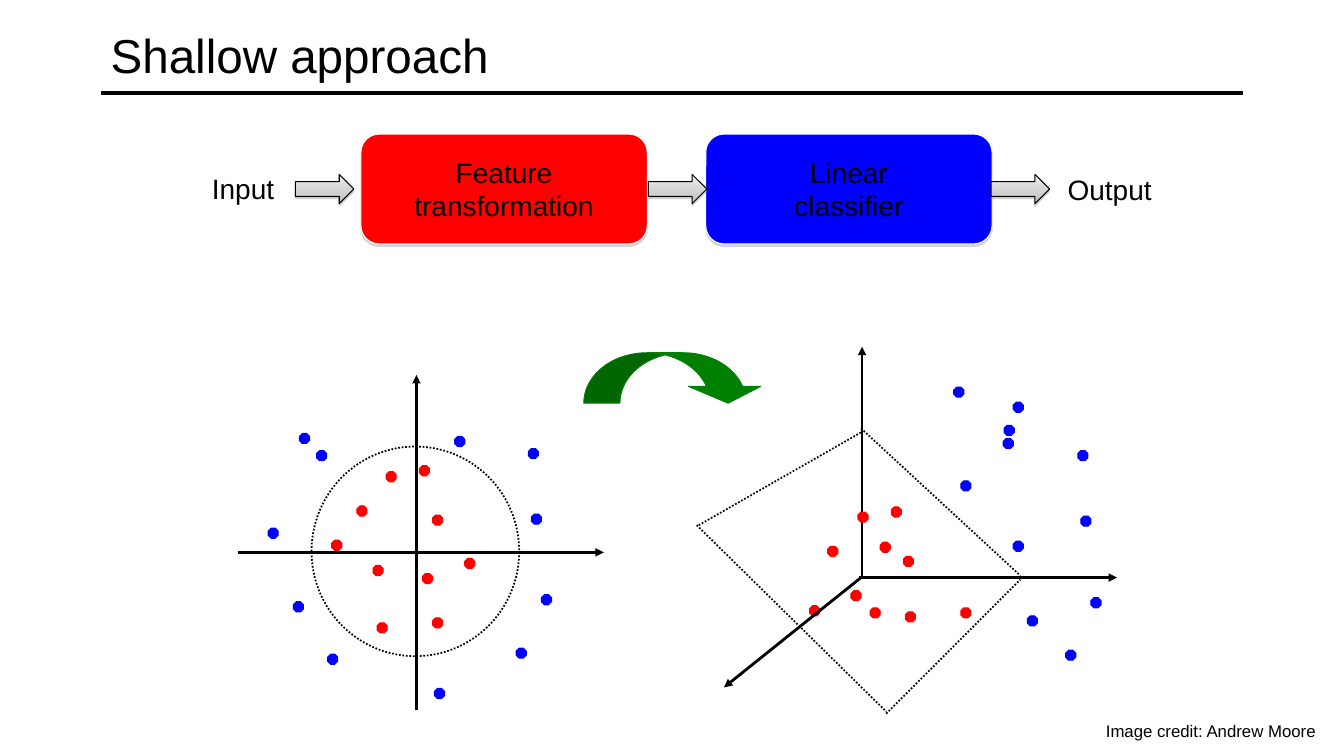
from copy import deepcopy
from dataclasses import dataclass

from pptx import Presentation
from pptx.dml.color import RGBColor as Rgb
from pptx.enum.dml import MSO_LINE as Dash
from pptx.enum.shapes import MSO_CONNECTOR as Link, MSO_SHAPE as Kind
from pptx.enum.text import MSO_ANCHOR as Anchor, PP_ALIGN as Align
from pptx.oxml.ns import qn
from pptx.oxml.xmlchemy import OxmlElement as Node
from pptx.util import Emu, Pt


@dataclass(frozen=True)
class Theme:
    font: str = "Arial"
    black: str = "000000"
    white: str = "FFFFFF"
    red: str = "FF0000"
    blue: str = "0000FF"
    green: str = "008000"
    shade: str = "808080"
    steel: tuple = ((0, "EDEDED"), (0.65, "D0D0D0"), (1, "BCBCBC"))
    title: int = 34
    body: int = 20
    small: int = 12


theme = Theme()
SCALE = 9144  # EMU in one px, 100 px to the inch
DOT = 10


def px(*nums):
    return [Emu(n * SCALE) for n in nums]


def write(frame, text, size, align=Align.LEFT, anchor=Anchor.MIDDLE, wrap=True):
    frame.word_wrap = wrap
    frame.vertical_anchor = anchor
    para = frame.paragraphs[0]
    para.alignment = align
    for i, part in enumerate(text.split("\n")):
        if i:
            para.add_line_break()
        run = para.add_run()
        run.text = part
        run.font.name = theme.font
        run.font.size = Pt(size)
        run.font.color.rgb = Rgb.from_string(theme.black)


def label(slide, box, text, size, **look):
    write(slide.shapes.add_textbox(*px(*box)).text_frame, text, size, **look)


def shape(slide, kind, box, fill, edge, width=0.75):
    item = slide.shapes.add_shape(kind, *px(*box))
    item.shadow.inherit = False
    if fill:
        item.fill.solid()
        item.fill.fore_color.rgb = Rgb.from_string(fill)
    else:
        item.fill.background()
    item.line.color.rgb = Rgb.from_string(edge)
    item.line.width = Pt(width)
    return item


def line(slide, ends, width, dash=None, head=False):
    item = slide.shapes.add_connector(Link.STRAIGHT, *px(*ends))
    item.line.color.rgb = Rgb.from_string(theme.black)
    item.line.width = Pt(width)
    if dash:
        item.line.dash_style = dash
    props = item._element.spPr
    if head:
        tip = Node("a:tailEnd")
        tip.set("type", "triangle")
        props.find(qn("a:ln")).append(tip)
    props.append(Node("a:effectLst"))


def shadow(item, drop, alpha):
    cast = Node("a:outerShdw")
    for key, val in (("blurRad", 0), ("dist", Pt(drop)), ("dir", 5400000), ("rotWithShape", 0)):
        cast.set(key, str(int(val)))
    tone = Node("a:srgbClr")
    tone.set("val", theme.shade)
    veil = Node("a:alpha")
    veil.set("val", str(alpha * 1000))
    tone.append(veil)
    cast.append(tone)
    item._element.spPr.find(qn("a:effectLst")).append(cast)


def arrow(slide, x, y):
    item = shape(slide, Kind.RIGHT_ARROW, (x, y, 58, 29), theme.white, theme.black)
    item.fill.gradient()
    item.fill.gradient_angle = 270
    stops = item._element.spPr.find(qn("a:gradFill")).find(qn("a:gsLst"))
    stops.append(deepcopy(stops[0]))
    for stop, (pos, tone) in zip(item.fill.gradient_stops, theme.steel):
        stop.position = pos
        stop.color.rgb = Rgb.from_string(tone)
    shadow(item, 1.6, 38)


def header(slide, x, y, w, h):
    line(slide, (x, y + 84, x + w, y + 84), 3)
    label(slide, (x, y, w, h), "Shallow approach", theme.title)


def flow(slide, x, y):
    stages = ((191, "Feature transformation", theme.red), (533, "Linear\nclassifier", theme.blue))
    for dx, text, fill in stages:
        item = shape(slide, Kind.ROUNDED_RECTANGLE, (x + dx, y, 284, 109), fill, theme.white)
        shadow(item, 1.8, 35)
        write(item.text_frame, text, theme.body, align=Align.CENTER)
    label(slide, (x, y + 32, 156, 44), "Input ", theme.body, align=Align.CENTER)
    label(slide, (x + 882, y + 33, 134, 44), "Output", theme.body, anchor=Anchor.TOP)
    for dx in (126, 476, 816):
        arrow(slide, x + dx, y + 40)


def axes(slide, x, y, rays):
    for x1, y1, x2, y2 in rays:
        line(slide, (x + x1, y + y1, x + x2, y + y2), 2, head=True)


def dots(slide, x, y, spots, tone):
    for dx, dy in spots:
        shape(slide, Kind.OCTAGON, (x + dx, y + dy, DOT, DOT), tone, tone)


def circle_plot(slide, x, y):
    axes(slide, x, y, ((177, 332, 177, 0), (0, 176, 363, 176)))
    inner = ((180, 90), (118, 130), (134, 189), (193, 241), (147, 96),
             (93, 164), (138, 246), (193, 139), (225, 182), (183, 197))
    outer = ((291, 138), (276, 271), (30, 152), (195, 311), (301, 218), (89, 277),
             (55, 225), (61, 58), (215, 61), (78, 75), (288, 73))
    dots(slide, x, y, inner, theme.red)
    dots(slide, x, y, outer, theme.blue)
    ring = shape(slide, Kind.OVAL, (x + 73, y + 71, 206, 208), None, theme.black, 1.25)
    ring.line.dash_style = Dash.ROUND_DOT


def plane_plot(slide, x, y):
    axes(slide, x, y, ((164, 227, 164, 0), (161, 229, 417, 229)))
    below = ((193, 159), (130, 198), (172, 259), (262, 259), (160, 164),
             (182, 194), (207, 263), (205, 208), (153, 242), (112, 257))
    above = ((381, 168), (366, 301), (314, 55), (314, 193), (391, 249), (262, 133),
             (328, 267), (305, 78), (304, 91), (255, 40), (378, 103))
    dots(slide, x, y, below, theme.red)
    dots(slide, x, y, above, theme.blue)
    axes(slide, x, y, ((163, 229, 27, 338),))
    # Edges of the separating plane
    edges = ((163, 81, 321, 227), (188, 364, 321, 231), (2, 177, 163, 85), (0, 177, 188, 362))
    for x1, y1, x2, y2 in edges:
        line(slide, (x + x1, y + y1, x + x2, y + y2), 1.25, dash=Dash.ROUND_DOT)


def bend(slide, *box):
    item = shape(slide, Kind.CURVED_DOWN_ARROW, box, theme.green, theme.green)
    for i, val in enumerate((0.717, 1.433, 0.333)):
        item.adjustments[i] = val


def main():
    deck = Presentation()
    deck.slide_width, deck.slide_height = px(1333, 750)
    slide = deck.slides.add_slide(deck.slide_layouts[6])
    # Title and pipeline
    header(slide, 100, 8, 1133, 92)
    flow(slide, 167, 133)
    # Data before and after the mapping
    circle_plot(slide, 236, 372)
    plane_plot(slide, 691, 344)
    bend(slide, 579, 350, 179, 50)
    # Credit
    label(slide, (1087, 710, 230, 30), "Image credit: Andrew Moore", theme.small,
          anchor=Anchor.TOP, wrap=False)
    deck.save("out.pptx")


if __name__ == "__main__":
    main()
